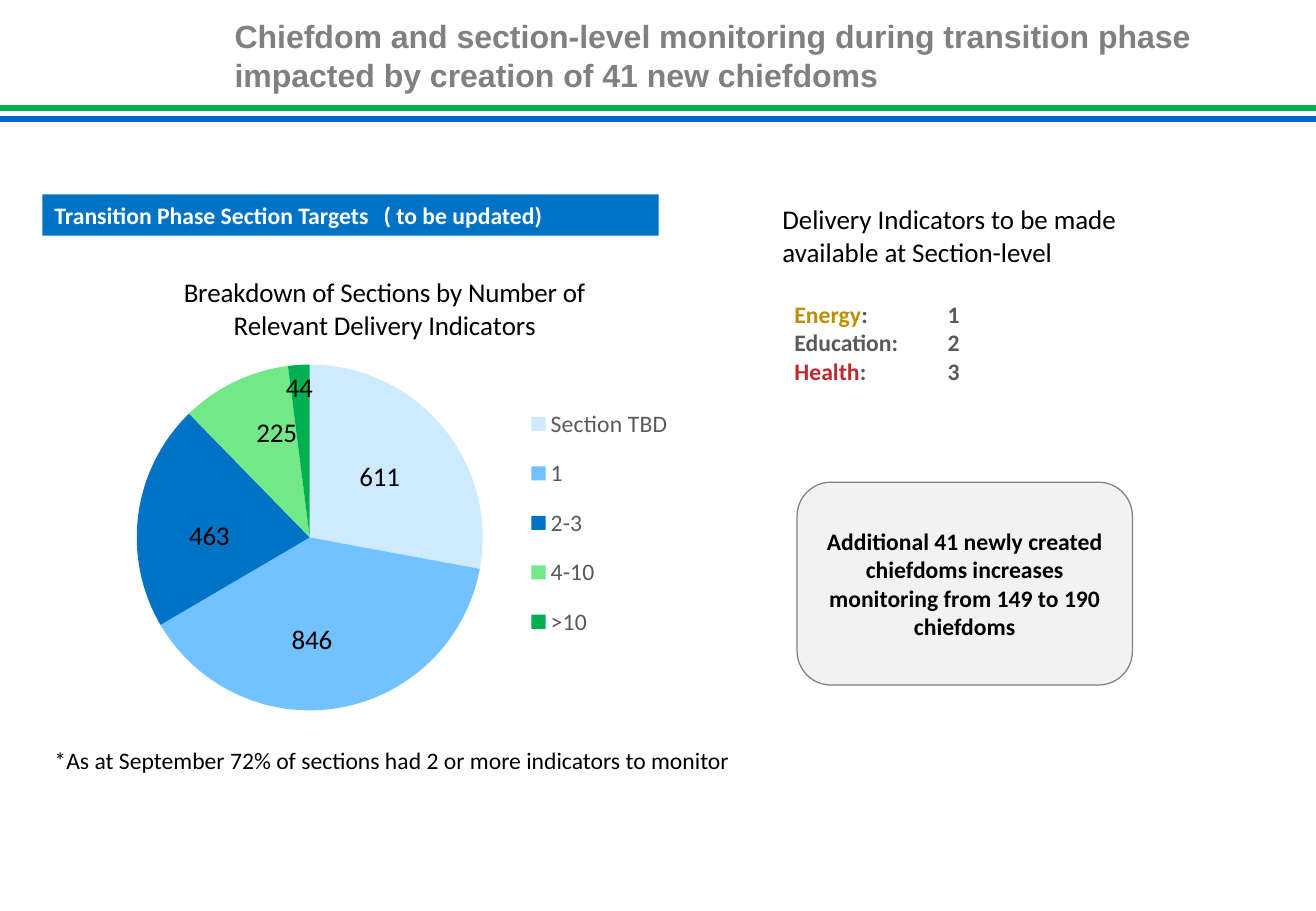
from pptx import Presentation
from pptx.chart.data import CategoryChartData
from pptx.dml.color import RGBColor
from pptx.enum.chart import XL_CHART_TYPE, XL_LABEL_POSITION, XL_LEGEND_POSITION
from pptx.enum.shapes import MSO_CONNECTOR, MSO_SHAPE
from pptx.enum.text import MSO_ANCHOR, PP_ALIGN
from pptx.oxml import parse_xml
from pptx.oxml.ns import nsdecls, qn
from pptx.util import Inches, Pt
from lxml.etree import SubElement


class Theme:
    head, body = "Arial", "Calibri"
    big, mid, small = 19, 16, 14
    black, white = "000000", "FFFFFF"
    gray, dark, pale = "808080", "595959", "F2F2F2"
    green, rule, blue = "00B050", "0066CC", "0073C6"
    gold, red = "BC8F00", "C1272D"
    slices = ["CDEAFF", "71C2FF", blue, "72E888", green]


def rgb(code):
    return RGBColor.from_string(code)


def style(font, size, color=Theme.black, bold=False, name=Theme.body):
    font.name, font.size, font.bold = name, Pt(size), bold
    font.color.rgb = rgb(color)


def set_tab(para, pos):
    tabs = SubElement(para._p.get_or_add_pPr(), qn("a:tabLst"))
    SubElement(tabs, qn("a:tab"), pos=str(Inches(pos)), algn="l")


def add_box(slide, box):
    shape = slide.shapes.add_textbox(*map(Inches, box))
    shape.text_frame.word_wrap = True
    return shape.text_frame


def add_text(slide, box, text, size):
    para = add_box(slide, box).paragraphs[0]
    para.text = text
    style(para.font, size)


def add_panel(slide, kind, box, fill, line=None):
    shape = slide.shapes.add_shape(kind, *map(Inches, box))
    shape.shadow.inherit = False
    shape.fill.solid()
    shape.fill.fore_color.rgb = rgb(fill)
    if line:
        shape.line.color.rgb = rgb(line)
        shape.line.width = Pt(0.75)
    else:
        shape.line.fill.background()
    shape.text_frame.word_wrap = True
    return shape.text_frame


def add_header(slide, box):
    x, y, w, h = box
    # Title
    frame = add_box(slide, (x + 1.94, y + 0.13, 8.82, 0.64))
    frame.margin_left = frame.margin_right = 0
    frame.margin_top = frame.margin_bottom = 0
    frame.vertical_anchor = MSO_ANCHOR.BOTTOM
    para = frame.paragraphs[0]
    para.text = ("Chiefdom and section-level monitoring during transition phase "
                 "impacted by creation of 41 new chiefdoms")
    style(para.font, Theme.big, Theme.gray, True, Theme.head)
    # Double rule
    for top, color in ((h - 0.09, Theme.green), (h, Theme.rule)):
        line = slide.shapes.add_connector(
            MSO_CONNECTOR.STRAIGHT, Inches(x), Inches(y + top),
            Inches(x + w), Inches(y + top))
        line.line.color.rgb = rgb(color)
        line.line.width = Pt(3.75)
        SubElement(line._element.spPr, qn("a:effectLst"))


def set_layout(node, index, **parts):
    for old in node.findall(qn("c:layout")):
        node.remove(old)
    tags = "".join(f'<c:{key} val="{val}"/>' for key, val in parts.items())
    node.insert(index, parse_xml(
        f'<c:layout {nsdecls("c")}><c:manualLayout>{tags}'
        '</c:manualLayout></c:layout>'))


def add_pie(slide, box):
    data = CategoryChartData()
    data.categories = ["Section TBD", "1", "2-3", "4-10", ">10"]
    data.add_series("Series 1", (611, 846, 463, 225, 44))
    chart = slide.shapes.add_chart(
        XL_CHART_TYPE.PIE, *map(Inches, box), data).chart
    style(chart.font, 10, name=Theme.head)

    # Title and plot
    chart.has_title = True
    title = chart.chart_title.text_frame
    title.text = "Breakdown of Sections by Number of Relevant Delivery Indicators"
    style(title.paragraphs[0].font, Theme.mid)
    area = chart._chartSpace.find(".//" + qn("c:plotArea"))
    set_layout(area, 0, layoutTarget="inner", xMode="edge", yMode="edge",
               x=0.08, y=0.23, w=0.6, h=0.71)

    # Legend
    chart.has_legend = True
    legend = chart.legend
    legend.position = XL_LEGEND_POSITION.RIGHT
    legend.include_in_layout = False
    style(legend.font, Theme.small, Theme.dark)
    set_layout(legend._element, 1, xMode="edge", yMode="edge",
               x=0.7, y=0.28, w=0.29, h=0.55)

    # Slices and values
    plot = chart.plots[0]
    plot.vary_by_categories = True
    points = plot.series[0].points
    for i, color in enumerate(Theme.slices):
        fill = points[i].format.fill
        fill.solid()
        fill.fore_color.rgb = rgb(color)
    labels = plot.series[0].data_labels
    labels.show_value = True
    labels.position = XL_LABEL_POSITION.INSIDE_END
    style(labels.font, Theme.mid)
    # Pull the wide slices' values inward
    shifts = ((-0.06, 0.06), (-0.01, -0.09), (0.07, 0.01), (0.03, 0.06))
    for i, (dx, dy) in enumerate(shifts):
        label = points[i].data_label
        style(label.font, Theme.mid)
        label.position = XL_LABEL_POSITION.INSIDE_END
        set_layout(labels._element.findall(qn("c:dLbl"))[i], 1, x=dx, y=dy)


def add_targets(slide, box):
    x, y, w, h = box
    # Banner
    frame = add_panel(slide, MSO_SHAPE.RECTANGLE, (x, y, 5.07, 0.34), Theme.blue)
    para = frame.paragraphs[0]
    para.text = "Transition Phase Section Targets\t( to be updated)"
    para.alignment = PP_ALIGN.LEFT
    set_tab(para, 2.71)
    style(para.font, Theme.small, Theme.white, True)
    # Chart and footnote
    add_pie(slide, (x + 0.25, y + 0.48, 5.13, 4.01))
    add_text(slide, (x, y + h - 0.34, w, 0.34),
             "*As at September 72% of sections had 2 or more indicators to monitor",
             Theme.small)


def add_delivery(slide, box):
    x, y, w, h = box
    add_text(slide, (x, y, w, 0.64),
             "Delivery Indicators to be made available at Section-level", Theme.mid)
    # Indicator counts
    frame = add_box(slide, (x + 0.1, y + 0.8, 2.74, 0.81))
    rows = (("Energy", Theme.gold, 1), ("Education", Theme.dark, 2),
            ("Health", Theme.red, 3))
    for i, (name, color, count) in enumerate(rows):
        para = frame.add_paragraph() if i else frame.paragraphs[0]
        set_tab(para, 1.26)
        style(para.font, Theme.small, Theme.dark, True)
        run = para.add_run()
        run.text = name
        run.font.color.rgb = rgb(color)
        para.add_run().text = f":\t{count}"
    # Callout
    frame = add_panel(slide, MSO_SHAPE.ROUNDED_RECTANGLE,
                      (x + 0.22, y + h - 1.67, 2.76, 1.67), Theme.pale, Theme.gray)
    frame.margin_left = frame.margin_right = Inches(0.04)
    frame.vertical_anchor = MSO_ANCHOR.MIDDLE
    para = frame.paragraphs[0]
    para.text = ("Additional 41 newly created chiefdoms increases "
                 "monitoring from 149 to 190 chiefdoms")
    para.alignment = PP_ALIGN.CENTER
    style(para.font, Theme.small, bold=True)


def main():
    deck = Presentation()
    deck.slide_width, deck.slide_height = Inches(10.83), Inches(7.5)
    slide = deck.slides.add_slide(deck.slide_layouts[6])
    add_header(slide, (-0.01, 0, 10.84, 0.98))
    add_targets(slide, (0.35, 1.6, 5.99, 4.83))
    add_delivery(slide, (6.34, 1.62, 3.39, 4.02))
    deck.save("out.pptx")


if __name__ == "__main__":
    main()
